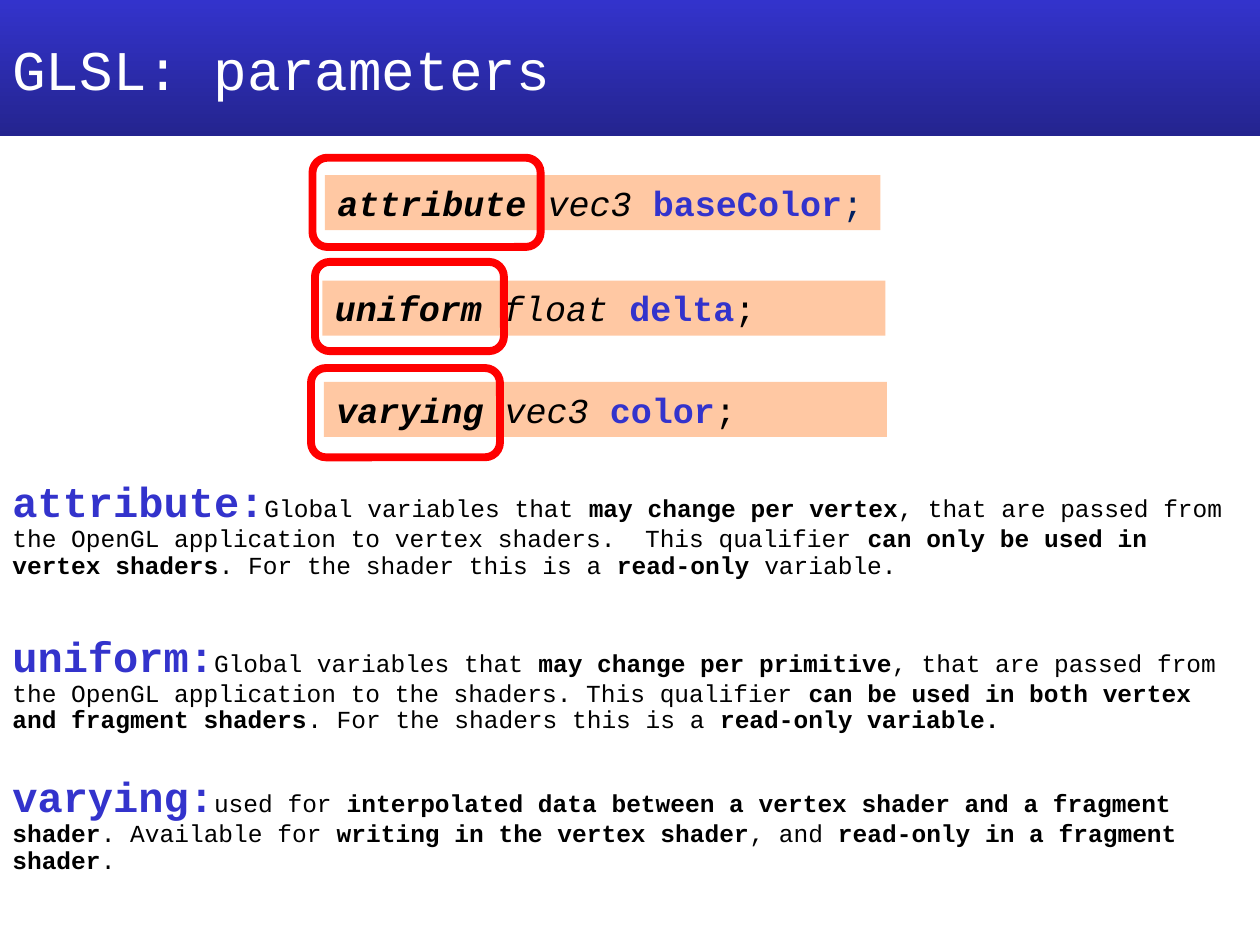
"""Build the slide on GLSL parameter qualifiers."""
from pptx import Presentation
from pptx.dml.color import RGBColor
from pptx.enum.shapes import MSO_SHAPE as SHAPE
from pptx.enum.text import MSO_ANCHOR as ANCHOR, MSO_AUTO_SIZE as AUTOSIZE, PP_ALIGN as ALIGN
from pptx.util import Cm, Pt

COLORS = {"blue": "3333CC", "navy": "24248F", "peach": "FFC8A3", "red": "FF0000",
          "ink": "002060", "black": "000000", "white": "FFFFFF"}


def add_run(p, text, size=14, color="black", bold=False, italic=False):
    r = p.add_run()
    r.text = text
    r.font.name = "Courier New"
    r.font.size = Pt(size)
    r.font.bold = bold
    r.font.italic = italic
    r.font.color.rgb = RGBColor.from_string(COLORS[color])


def add_box(s, kind, left, top, width, height):
    sp = s.shapes.add_shape(kind, Cm(left), Cm(top), Cm(width), Cm(height))
    sp.shadow.inherit = False
    sp.line.fill.background()
    return sp


prs = Presentation()
prs.slide_width, prs.slide_height = Cm(25.4), Cm(19.05)
s = prs.slides.add_slide(prs.slide_layouts[6])

title = add_box(s, SHAPE.RECTANGLE, 0, 0, 25.4, 2.74)
title.fill.gradient()
title.fill.gradient_angle = 270
for stop, color in zip(title.fill.gradient_stops, ("blue", "navy")):
    stop.color.rgb = RGBColor.from_string(COLORS[color])
tf = title.text_frame
tf.vertical_anchor = ANCHOR.MIDDLE
p = tf.paragraphs[0]
p.alignment = ALIGN.LEFT
add_run(p, "GLSL: parameters", size=32, color="white")

definitions = [
    ("attribute:", 0, [
        "Global variables that ", "may change per vertex",
        ", that are passed from the OpenGL application to vertex shaders.  This qualifier ",
        "can only be used in vertex shaders", ". For the shader this is a ",
        "read-only", " variable."]),
    ("uniform:", 32, [
        "Global variables that ", "may change per primitive",
        ", that are passed from the OpenGL application to the shaders. This qualifier ",
        "can be used in both vertex and fragment shaders",
        ". For the shaders this is a ", "read-only variable."]),
    ("varying:", 24, [
        "used for ", "interpolated data between a vertex shader and a fragment shader",
        ". Available for ", "writing in the vertex shader", ", and ",
        "read-only in a fragment shader", "."]),
]
body = s.shapes.add_textbox(Cm(0), Cm(9.58), Cm(25.4), Cm(8.84))
tf = body.text_frame
tf.word_wrap = True
for i, (term, gap, parts) in enumerate(definitions):
    p = tf.add_paragraph() if i else tf.paragraphs[0]
    p.line_spacing = 0.9
    p.space_before = Pt(gap)
    add_run(p, term, size=24, color="blue", bold=True)
    for j, part in enumerate(parts):
        add_run(p, part, bold=j % 2 == 1)

declarations = [
    ("varying ", "vec3 ", "color", "black", (6.53, 7.7, 11.35), (6.27, 7.42, 3.81)),
    ("attribute", " vec3 ", "baseColor", "ink", (6.55, 3.53, 11.2), (6.3, 3.18, 4.6)),
    ("uniform ", "float ", "delta", "black", (6.5, 5.66, 11.35), (6.35, 5.28, 3.81)),
]
for qualifier, kind, name, end_color, (x, y, w), (ring_x, ring_y, ring_w) in declarations:
    code = add_box(s, SHAPE.RECTANGLE, x, y, w, 1.11)
    code.fill.solid()
    code.fill.fore_color.rgb = RGBColor.from_string(COLORS["peach"])
    tf = code.text_frame
    tf.word_wrap = name != "baseColor"
    tf.auto_size = AUTOSIZE.SHAPE_TO_FIT_TEXT
    tf.vertical_anchor = ANCHOR.TOP
    p = tf.paragraphs[0]
    p.alignment = ALIGN.LEFT
    add_run(p, qualifier, size=20, bold=True, italic=True)
    add_run(p, kind, size=20, italic=True)
    add_run(p, name, size=20, color="blue", bold=True)
    add_run(p, ";", size=20, color=end_color)

    ring = add_box(s, SHAPE.ROUNDED_RECTANGLE, ring_x, ring_y, ring_w, 1.8)
    ring.fill.background()
    ring.line.color.rgb = RGBColor.from_string(COLORS["red"])
    ring.line.width = Pt(4.5)

prs.save("out.pptx")
